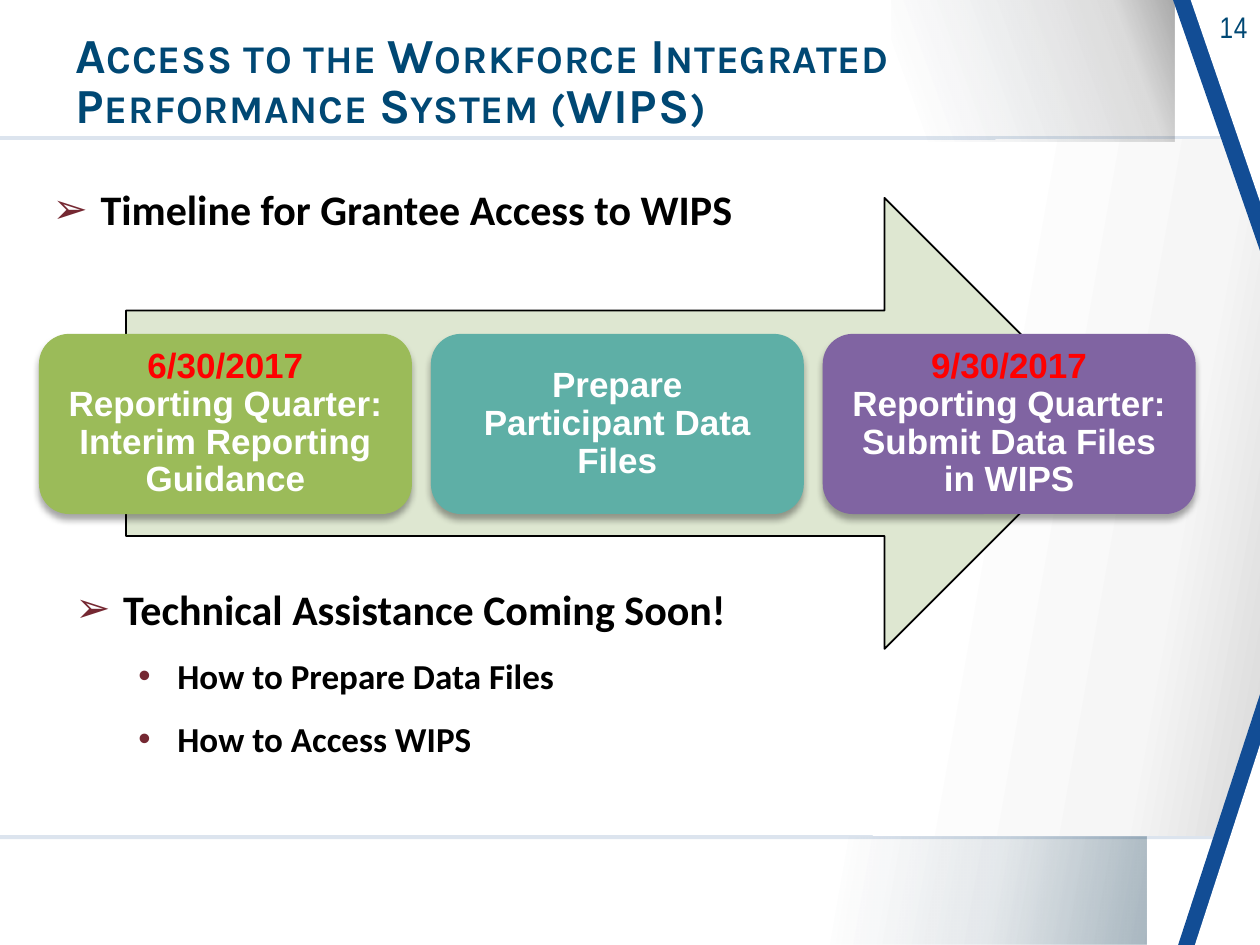
from lxml import etree
from pptx import Presentation
from pptx import util as u
from pptx.dml.color import RGBColor
from pptx.enum import shapes, text
from pptx.oxml import parse_xml
from pptx.oxml.ns import nsdecls, qn

SHAPE = shapes.MSO_SHAPE
NAVY, BLUE, WHITE, BLACK, RED, MAROON = (
    "004874", "124D95", "FFFFFF", "000000", "FF0000", "752832")


def color(hex_string):
    return RGBColor.from_string(hex_string)


def color_xml(hex_string, opacity=100):
    return f'<a:srgbClr val="{hex_string}"><a:alpha val="{opacity * 1000}"/></a:srgbClr>'


def inches(box):
    return [u.Inches(length) for length in box]


def add_shape(slide, kind, box, fill, line=None):
    shape = slide.shapes.add_shape(kind, *inches(box))
    shape.shadow.inherit = False
    shape.fill.solid()
    shape.fill.fore_color.rgb = color(fill)
    if line:
        shape.line.color.rgb = color(line)
        shape.line.width = u.Pt(1)
    else:
        shape.line.fill.background()
    return shape


def add_gradient(slide, box, stops, angle):
    """Rectangle with stops of (position, colour, opacity), all but angle in percent."""
    shape = add_shape(slide, SHAPE.RECTANGLE, box, WHITE)
    stop_xml = "".join(f'<a:gs pos="{position * 1000}">{color_xml(tone, opacity)}</a:gs>'
                       for position, tone, opacity in stops)
    gradient = parse_xml(
        f'<a:gradFill {nsdecls("a")} rotWithShape="1"><a:gsLst>{stop_xml}</a:gsLst>'
        f'<a:lin ang="{angle * 60000}" scaled="0"/></a:gradFill>')
    properties = shape.element.spPr
    properties.replace(properties.find(qn("a:solidFill")), gradient)


def add_corner(slide, box, fill, pointing_down):
    """Triangle whose upright side lies on the right edge of the slide."""
    shape = add_shape(slide, SHAPE.ISOSCELES_TRIANGLE, box, fill)
    shape.adjustments[0] = 0 if pointing_down else 1
    shape.rotation = 180 if pointing_down else 0


def format_run(run, size, font, tone, bold=True):
    run.font.size = u.Pt(size)
    run.font.name = font
    run.font.bold = bold
    run.font.color.rgb = color(tone)


def add_text_box(slide, box):
    frame = slide.shapes.add_textbox(*inches(box)).text_frame
    frame.word_wrap = True
    return frame


def set_bullet(paragraph, character, margin, indent):
    properties = paragraph._p.get_or_add_pPr()
    properties.set("marL", str(u.Inches(margin)))
    properties.set("indent", str(u.Inches(indent)))
    bullet_color = etree.SubElement(properties, qn("a:buClr"))
    etree.SubElement(bullet_color, qn("a:srgbClr"), val=MAROON)
    etree.SubElement(properties, qn("a:buFont"), typeface="Arial")
    etree.SubElement(properties, qn("a:buChar"), char=character)


def add_bullets(slide, box, heading, points=()):
    frame = add_text_box(slide, box)
    for index, words in enumerate([heading, *points]):
        paragraph = frame.add_paragraph() if index else frame.paragraphs[0]
        paragraph.text = words
        if index:
            paragraph.level = 1
            set_bullet(paragraph, "•", 0.81, -0.31)
            paragraph.space_before = u.Pt(6)
        else:
            set_bullet(paragraph, "➢", 0.38, -0.38)
        paragraph.space_after = u.Pt(6)
        format_run(paragraph.runs[0], 20 if index else 24, "Calibri", BLACK)


def add_step(slide, left, fill, date, words):
    shape = add_shape(slide, SHAPE.ROUNDED_RECTANGLE, (left, 2.65, 2.96, 1.43), fill)
    shape.element.spPr.find(qn("a:effectLst")).append(parse_xml(
        f'<a:outerShdw {nsdecls("a")} blurRad="{u.Pt(4)}" dist="{u.Pt(3)}" dir="5400000" '
        f'rotWithShape="0">{color_xml(BLACK, 35)}</a:outerShdw>'))
    frame = shape.text_frame
    frame.word_wrap = True
    frame.vertical_anchor = text.MSO_ANCHOR.MIDDLE
    frame.margin_left = frame.margin_right = u.Inches(0.15)
    frame.margin_top = frame.margin_bottom = u.Inches(0.15)
    paragraph = frame.paragraphs[0]
    paragraph.alignment = text.PP_ALIGN.CENTER
    paragraph.line_spacing = 0.9
    for part, tone in ((date, RED), (words, WHITE)):
        if part:
            run = paragraph.add_run()
            run.text = part
            format_run(run, 20, "Arial", tone)


def add_background(slide):
    # Pale band whose edges show above and below the main panel
    band = add_shape(slide, SHAPE.RECTANGLE, (0, 1.08, 10, 5.58), WHITE)
    band_color = band.element.spPr.find(qn("a:solidFill"))
    band_color.clear()
    band_color.append(parse_xml(color_xml("275A99", 16).replace(
        "<a:srgbClr", f'<a:srgbClr {nsdecls("a")}', 1)))
    add_gradient(slide, (0, 1.11, 10, 5.52), [
        (0, WHITE, 100), (72, WHITE, 100), (90, "F6F6F6", 100), (100, "D9D9D9", 100)], 10)
    # Shaded blocks at the bottom and top
    add_gradient(slide, (6.43, 6.64, 2.67, 0.86), [
        (10, "002C47", 0), (56, "002C47", 11), (100, "002C47", 34)], 10)
    add_gradient(slide, (7.08, 0, 2.24, 1.12), [
        (10, "002C47", 0), (81, BLACK, 14), (100, BLACK, 34)], 340)
    # Blue diagonals with white corners, and the page number
    add_corner(slide, (9.31, 0, 0.69, 1.99), BLUE, True)
    add_corner(slide, (9.45, 0, 0.55, 1.6), WHITE, True)
    add_corner(slide, (9.35, 5.51, 0.65, 1.99), BLUE, False)
    add_corner(slide, (9.48, 5.91, 0.52, 1.6), WHITE, False)
    paragraph = add_text_box(slide, (9.2, 0.02, 0.8, 0.39)).paragraphs[0]
    paragraph.text = "14"
    paragraph.alignment = text.PP_ALIGN.RIGHT
    format_run(paragraph.runs[0], 17, "Arial Narrow", NAVY, bold=False)
    paragraph.runs[0].font._element.set("spc", "40")


def set_title(slide, words):
    title = slide.shapes.title
    title.left, title.top, title.width, title.height = inches((0.5, 0.24, 7.56, 0.85))
    frame = title.text_frame
    frame.text = words
    frame.auto_size = text.MSO_AUTO_SIZE.NONE
    frame.vertical_anchor = text.MSO_ANCHOR.MIDDLE
    paragraph = frame.paragraphs[0]
    paragraph.alignment = text.PP_ALIGN.LEFT
    paragraph.line_spacing = 0.85
    run = paragraph.runs[0]
    format_run(run, 28, "Karla", NAVY)
    run.font._element.set("cap", "small")
    run.font._element.set("spc", "40")
    # Bring the title in front of the background
    title.element.getparent().append(title.element)


def main():
    presentation = Presentation()
    presentation.slide_width, presentation.slide_height = u.Inches(10), u.Inches(7.5)
    slide = presentation.slides.add_slide(presentation.slide_layouts[5])
    add_background(slide)
    set_title(slide, "Access to the Workforce Integrated Performance System (WIPS)")
    add_bullets(slide, (0.32, 1.41, 8.37, 0.58), "Timeline for Grantee Access to WIPS")

    # Timeline arrow with its steps
    add_shape(slide, SHAPE.RIGHT_ARROW, (1, 1.57, 7.81, 3.58), "DEE7D1", BLACK)
    steps = [
        ("9BBB59", "6/30/2017", " Reporting Quarter: Interim Reporting Guidance"),
        ("5EAFA6", "", "Prepare Participant Data Files"),
        ("8064A2", "9/30/2017", " Reporting Quarter: Submit Data Files in WIPS"),
    ]
    for index, step in enumerate(steps):
        add_step(slide, 0.31 + 3.11 * index, *step)

    add_bullets(slide, (0.5, 4.58, 8.37, 1.94), "Technical Assistance Coming Soon!",
                ["How to Prepare Data Files", "How to Access WIPS"])
    presentation.save("out.pptx")


if __name__ == "__main__":
    main()
